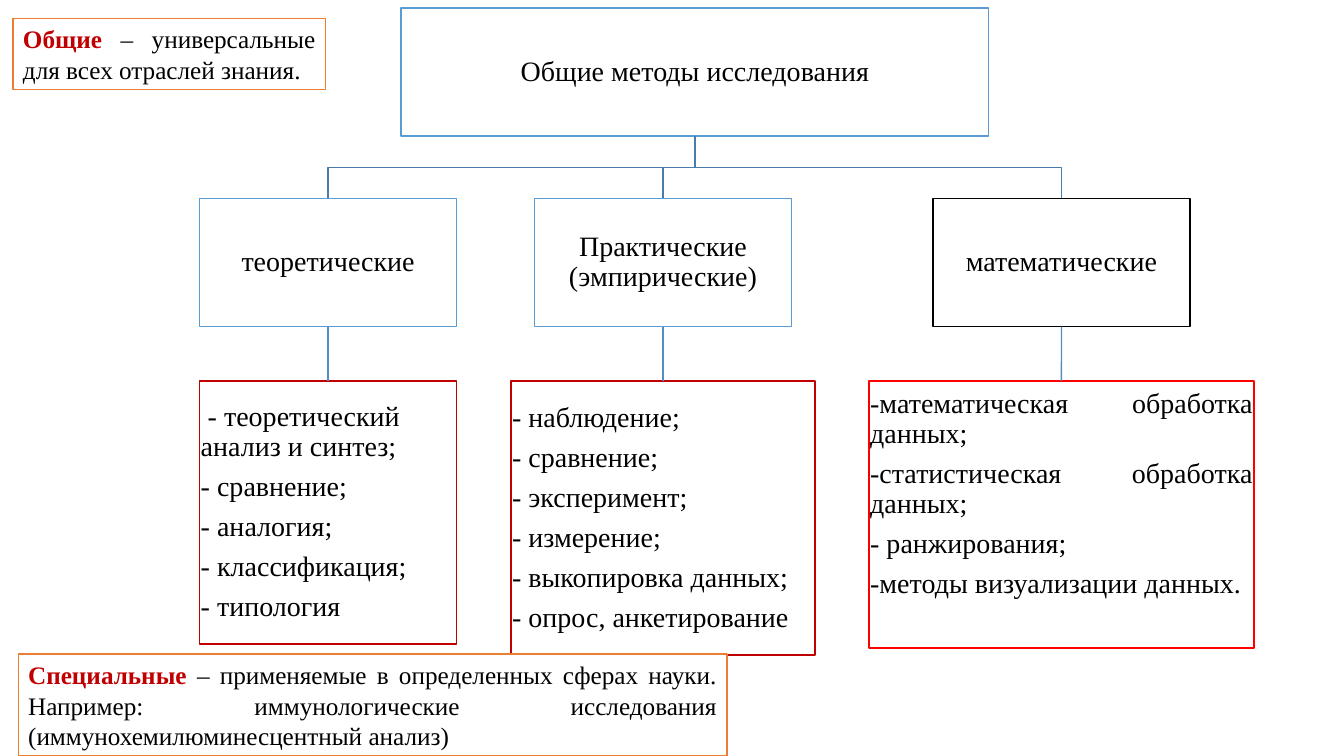
from lxml.etree import SubElement
from pptx import Presentation
from pptx.dml.color import RGBColor
from pptx.enum.shapes import MSO_CONNECTOR as Link, MSO_SHAPE as Kind
from pptx.enum.text import MSO_ANCHOR as Anchor, PP_ALIGN as Align
from pptx.oxml.ns import qn
from pptx.util import Cm, Pt

BLACK = RGBColor(0x00, 0x00, 0x00)
WHITE = RGBColor(0xFF, 0xFF, 0xFF)
BLUE = RGBColor(0x5B, 0x9B, 0xD5)
STEEL = RGBColor(0x49, 0x7C, 0xAB)
SKY = RGBColor(0x53, 0x8D, 0xC1)
DARK = RGBColor(0xC0, 0x00, 0x00)
RED = RGBColor(0xFF, 0x00, 0x00)
ORANGE = RGBColor(0xED, 0x7D, 0x31)

FONT = "Times New Roman"
INSET = Cm(0.03)
TIGHT = {"margin_left": INSET, "margin_right": INSET,
         "margin_top": INSET, "margin_bottom": INSET}
TREE = {"line_spacing": 0.9, "space_after": Pt(7)}

# Tree sizes in cm
ROW = 3.23      # height of the root and the heads
HEAD = 6.48     # width of a head
GAP = 1.57      # root to heads
DROP = 1.37     # heads to lists

# Branches: centre, head, head line, list width, list height, list line,
# alignment, bottom margin, items
BRANCHES = [
    (8.27, "теоретические", BLUE, 6.48, 6.63, DARK, Align.LEFT, 0.03,
     [" - теоретический анализ и синтез;", "- сравнение;", "- аналогия;",
      "- классификация;", "- типология"]),
    (16.71, "Практические (эмпирические)", BLUE, 7.67, 6.91, DARK,
     Align.JUSTIFY, 0.03,
     ["- наблюдение;", "- сравнение;", "- эксперимент;", "- измерение;",
      "- выкопировка данных;", "- опрос, анкетирование"]),
    (26.75, "математические", BLACK, 9.7, 6.73, RED, Align.JUSTIFY, 1.05,
     ["-математическая обработка данных;",
      "-статистическая обработка данных;", "- ранжирования;",
      "-методы визуализации данных."]),
]


def style(part, values):
    for name, value in values.items():
        setattr(part, name, value)


def add_box(slide, box, color, frame):
    """Add a white outlined rectangle; box is in cm."""
    shape = slide.shapes.add_shape(Kind.RECTANGLE, *map(Cm, box))
    shape.shadow.inherit = False
    shape.fill.solid()
    shape.fill.fore_color.rgb = WHITE
    shape.line.color.rgb = color
    shape.line.width = Pt(1)
    style(shape.text_frame, {"word_wrap": True,
                             "vertical_anchor": Anchor.MIDDLE, **frame})
    return shape


def add_run(para, text, size, color=BLACK, bold=False):
    run = para.add_run()
    run.text = text
    style(run.font, {"name": FONT, "size": Pt(size), "bold": bold})
    run.font.color.rgb = color


def add_node(slide, box, color, lines, align=Align.CENTER, foot=0.03):
    """Add a tree box with one paragraph per line."""
    node = add_box(slide, box, color, {**TIGHT, "margin_bottom": Cm(foot)})
    frame = node.text_frame
    for i, text in enumerate(lines):
        para = frame.add_paragraph() if i else frame.paragraphs[0]
        style(para, {"alignment": align, **TREE})
        add_run(para, text, 20)
    return node


def add_elbow(slide, x, y, end, low):
    """Add a bent line from the root down to a head."""
    mid = (y + low) / 2
    form = slide.shapes.build_freeform(Cm(x), Cm(y))
    turns = [(x, mid), (end, mid), (end, low)]
    form.add_line_segments([(Cm(a), Cm(b)) for a, b in turns], close=False)
    elbow = form.convert_to_shape()
    elbow.shadow.inherit = False
    elbow.fill.background()
    elbow.line.color.rgb = STEEL
    elbow.line.width = Pt(1)


def add_link(slide, head, items):
    """Join a head to the list below it."""
    link = slide.shapes.add_connector(Link.STRAIGHT, 0, 0, 0, 0)
    link.begin_connect(head, 2)
    link.end_connect(items, 0)
    link.line.color.rgb = SKY
    link.line.width = Pt(1)
    SubElement(link._element.spPr, qn("a:effectLst"))


def add_tree(slide, box):
    """Place the root in the box and the branches below it."""
    left, top, width, height = box
    base = top + height
    y = base + GAP
    low = y + ROW + DROP
    add_node(slide, box, BLUE, ["Общие методы исследования"])
    for mid, name, edge, wide, tall, rim, align, foot, lines in BRANCHES:
        add_elbow(slide, left + width / 2, base, mid, y)
        head = add_node(slide, (mid - HEAD / 2, y, HEAD, ROW), edge, [name])
        items = add_node(slide, (mid - wide / 2, low, wide, tall), rim,
                         lines, align, foot)
        add_link(slide, head, items)


def add_note(slide, box, term, text):
    """Add a definition with its term in bold."""
    note = add_box(slide, box, ORANGE, {})
    para = note.text_frame.paragraphs[0]
    para.alignment = Align.JUSTIFY
    add_run(para, term, 18, DARK, True)
    first, *rest = text.split("\n")
    add_run(para, first, 18)
    for line in rest:
        para.add_line_break()
        add_run(para, line, 18)


def main():
    deck = Presentation()
    style(deck, {"slide_width": Cm(33.87), "slide_height": Cm(19.05)})
    slide = deck.slides.add_slide(deck.slide_layouts[6])
    add_tree(slide, (10.11, 0.2, 14.81, ROW))
    # Definitions
    add_note(slide, (0.33, 0.46, 7.87, 1.8), "Общие",
             " – универсальные для всех отраслей знания.")
    add_note(slide, (0.46, 16.48, 17.86, 2.57), "Специальные ",
             "– применяемые в определенных сферах науки.\n"
             "Например: иммунологические исследования "
             "(иммунохемилюминесцентный анализ)")
    deck.save("out.pptx")


if __name__ == "__main__":
    main()
